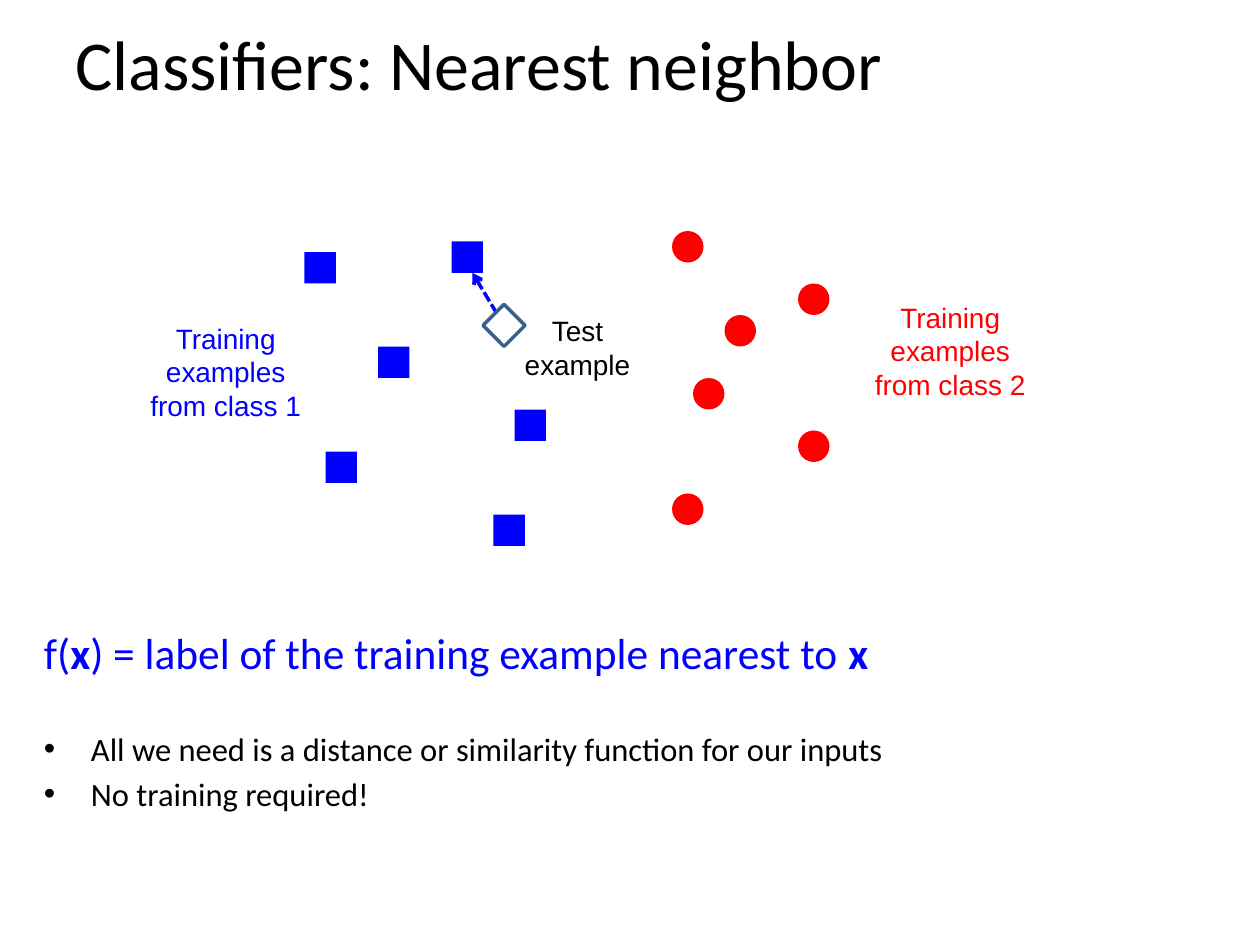
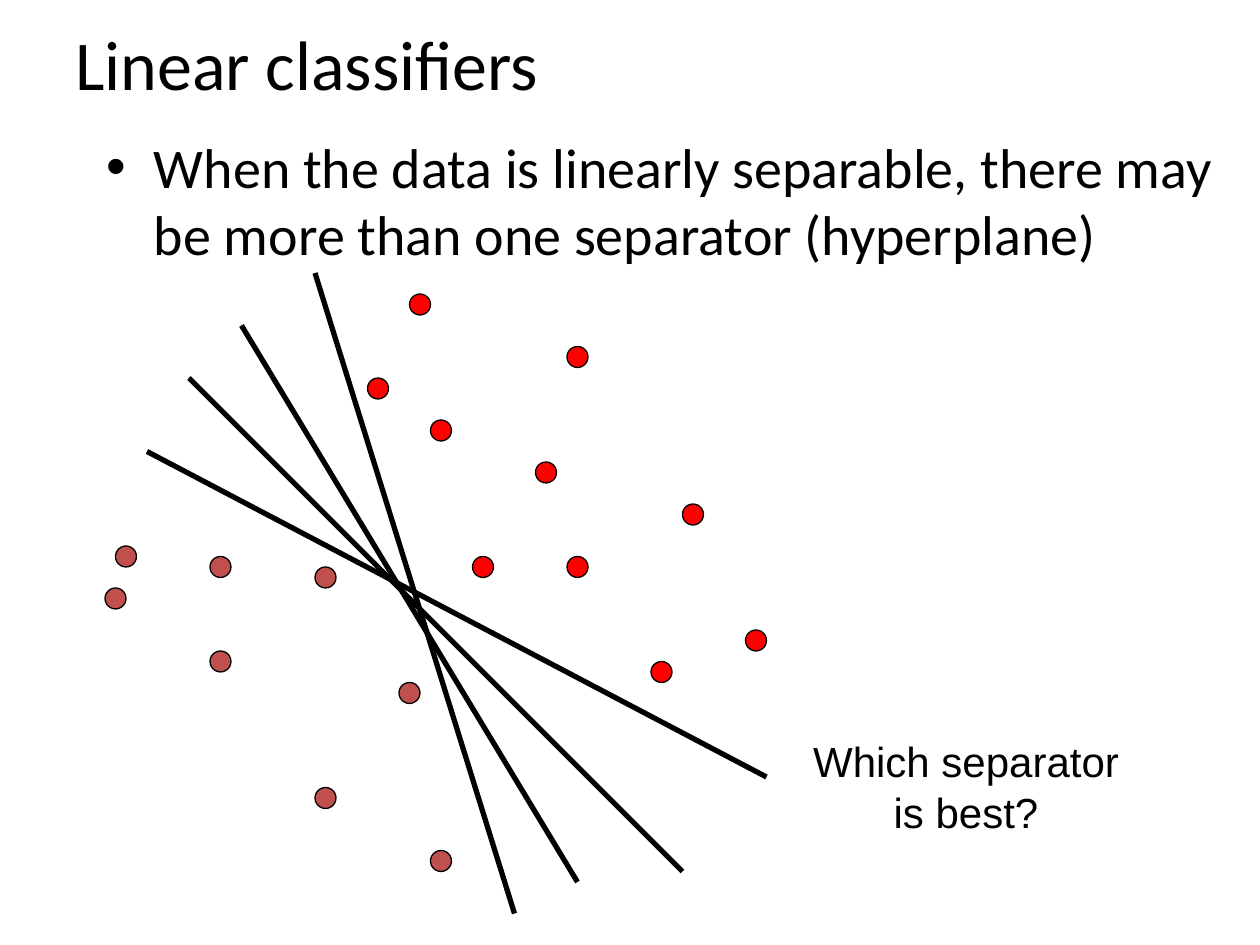
from lxml import etree
from pptx import Presentation, util as u
from pptx.dml import color
from pptx.enum import dml, shapes, text
from pptx.oxml import ns

COLORS = {
    "paper": "FFFFFF",
    "ink": "000000",
    "blue": "0000FF",
    "red": "FF0000",
    "brick": "C0504D",
    "steel": "3A5F8C",
}
SHAPE = shapes.MSO_SHAPE
CENTER = text.PP_ALIGN.CENTER


def grid(twelfths):
    return u.Cm(twelfths * 2.54 / 12)


def rgb(name):
    return color.RGBColor.from_string(COLORS[name])


def write(paragraph, content, size=16, font="Calibri", ink="ink",
          align=None, before=0, bullet=False):
    paragraph.alignment = align
    paragraph.space_before = u.Pt(before)
    for row, line in enumerate(content.split("\n")):
        if row:
            paragraph.add_line_break()
        for index, part in enumerate(line.split("*")):
            if part:
                run = paragraph.add_run()
                run.text = part
                run.font.name = font
                run.font.size = u.Pt(size)
                run.font.bold = index % 2 == 1
                run.font.color.rgb = rgb(ink)
    if bullet:
        properties = paragraph._p.get_or_add_pPr()
        indent = u.Cm(0.95)
        properties.set("marL", str(indent))
        properties.set("indent", str(-indent))
        etree.SubElement(properties, ns.qn("a:buFont"), typeface="Arial")
        etree.SubElement(properties, ns.qn("a:buChar"), char="•")


class Deck:
    def __init__(self):
        self.show = Presentation()
        self.show.slide_width = u.Cm(25.4)
        self.show.slide_height = u.Cm(19.05)
        self.slide = None

    def page(self, title):
        self.slide = self.show.slides.add_slide(self.show.slide_layouts[6])
        fill = self.slide.background.fill
        fill.solid()
        fill.fore_color.rgb = rgb("paper")
        heading = self.frame(6, 0, 108, 12)
        heading.vertical_anchor = text.MSO_ANCHOR.MIDDLE
        write(heading.paragraphs[0], title, size=40)

    def frame(self, left, top, width, height, wrap=True):
        area = self.slide.shapes.add_textbox(*map(grid, (left, top, width, height)))
        area.text_frame.word_wrap = wrap
        return area.text_frame

    def body(self, place, paragraphs):
        frame = self.frame(*place)
        for index, (content, style) in enumerate(paragraphs):
            paragraph = frame.add_paragraph() if index else frame.paragraphs[0]
            write(paragraph, content, **style)

    def label(self, place, content, wrap=True, **style):
        frame = self.frame(*place, wrap=wrap)
        frame.auto_size = text.MSO_AUTO_SIZE.SHAPE_TO_FIT_TEXT
        write(frame.paragraphs[0], content, font="Arial", align=CENTER, **style)

    def markers(self, kind, points, size, fill, edge=None, weight=0.75):
        for left, top in points:
            marker = self.slide.shapes.add_shape(
                kind, grid(left), grid(top), grid(size), grid(size))
            marker.shadow.inherit = False
            marker.fill.solid()
            marker.fill.fore_color.rgb = rgb(fill)
            if edge:
                marker.line.color.rgb = rgb(edge)
                marker.line.width = u.Pt(weight)
            else:
                marker.line.fill.background()

    def line(self, ends, ink="ink", weight=3, dashed_arrow=False):
        stroke = self.slide.shapes.add_connector(
            shapes.MSO_CONNECTOR.STRAIGHT, *map(grid, ends))
        stroke.line.color.rgb = rgb(ink)
        stroke.line.width = u.Pt(weight)
        properties = stroke._element.spPr
        if dashed_arrow:
            stroke.line.dash_style = dml.MSO_LINE.SQUARE_DOT
            etree.SubElement(properties.find(ns.qn("a:ln")),
                             ns.qn("a:tailEnd"), type="arrow")
        etree.SubElement(properties, ns.qn("a:effectLst"))


def nearest_neighbor(deck):
    class_1 = [(29, 24), (36, 33), (43, 23), (31, 43), (49, 39), (47, 49)]
    class_2 = [(76, 27), (66, 36), (76, 41), (64, 22), (69, 30), (64, 47)]
    deck.page("Classifiers: Nearest neighbor")
    deck.body((3, 59, 114, 17.4), [
        ("f(*x*) = label of the training example nearest to *x*",
         dict(size=24.8, ink="blue")),
        ("All we need is a distance or similarity function for our inputs",
         dict(size=18.6, before=29, bullet=True)),
        ("No training required!", dict(size=18.6, before=3.5, bullet=True)),
    ])
    deck.markers(SHAPE.RECTANGLE, class_1, 3, "blue")
    deck.markers(SHAPE.OVAL, class_2, 3, "red")
    deck.label((48, 29.3, 14, 7.7), "Test example")
    deck.label((13, 30, 17, 10.9), "Training examples from class 1", ink="blue")
    deck.label((82, 28, 17, 10.9), "Training examples from class 2", ink="red")
    deck.line((48, 31, 45, 26), ink="blue", weight=2, dashed_arrow=True)
    deck.markers(SHAPE.DIAMOND, [(46, 29)], 4, "paper", edge="steel", weight=2)


def linear_classifiers(deck):
    lower_class = [(11, 52), (20, 53), (20, 62), (10, 56),
                   (30, 54), (38, 65), (30, 75), (41, 81)]
    upper_class = [(41, 40), (51, 44), (54, 53), (45, 53), (35, 36),
                   (62, 63), (65, 48), (54, 33), (71, 60), (39, 28)]
    separators = [(18, 36, 65, 83), (23, 31, 55, 84),
                  (30, 26, 49, 87), (14, 43, 73, 74)]
    deck.page("Linear classifiers")
    deck.body((9, 12, 108, 69), [
        ("When the data is linearly separable, there may be more than one "
         "separator (hyperplane)", dict(size=32, bullet=True)),
    ])
    deck.markers(SHAPE.OVAL, lower_class, 2, "brick", edge="ink")
    deck.markers(SHAPE.OVAL, upper_class, 2, "red", edge="ink")
    for separator in separators:
        deck.line(separator)
    deck.label((76.1, 69.5, 31.8, 10.9), "Which separator\nis best?",
               wrap=False, size=24)


def main():
    deck = Deck()
    nearest_neighbor(deck)
    linear_classifiers(deck)
    deck.show.save("out.pptx")


if __name__ == "__main__":
    main()
